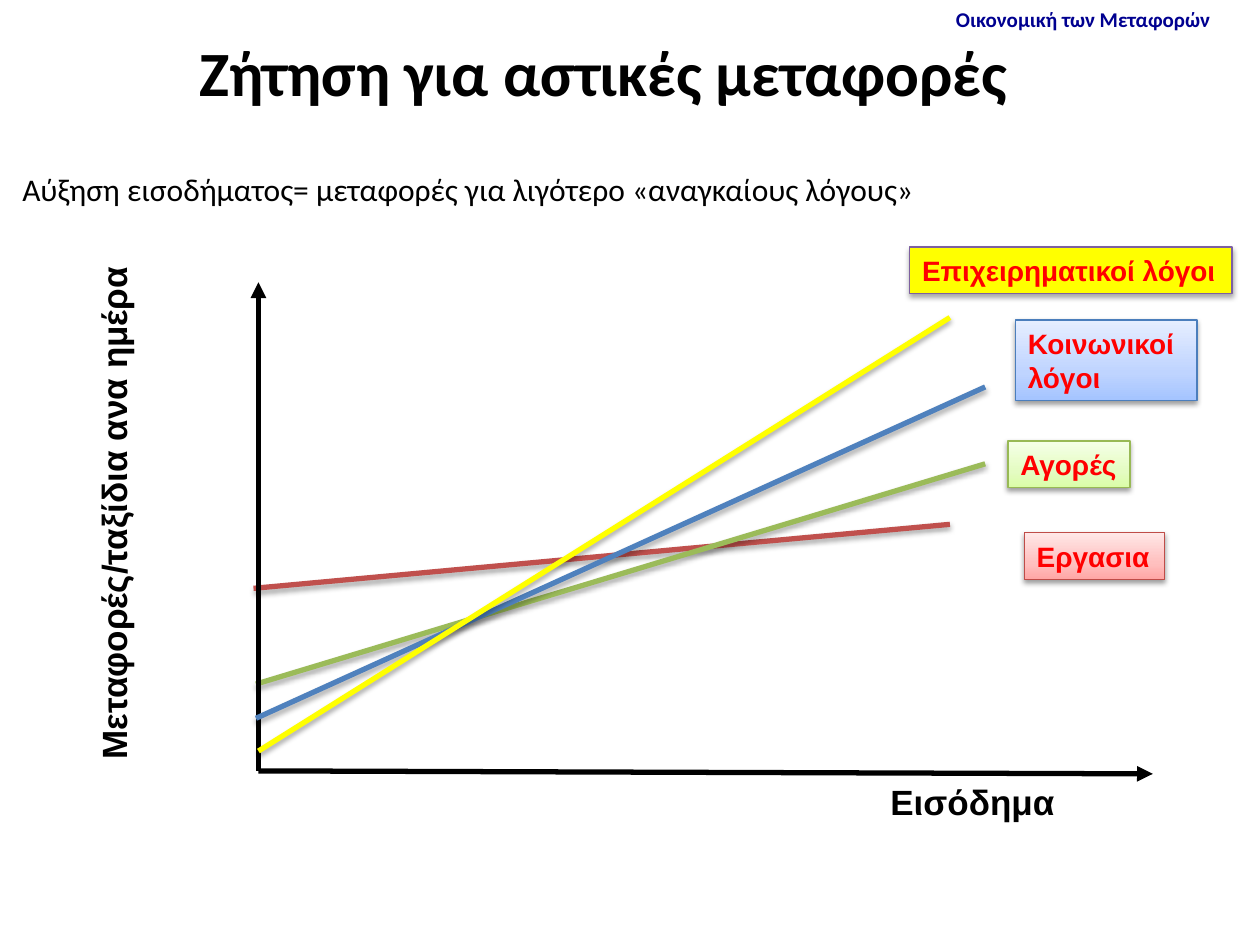
from copy import deepcopy

from lxml.etree import SubElement
from pptx import Presentation
from pptx.dml.color import RGBColor
from pptx.enum.shapes import MSO_CONNECTOR, MSO_SHAPE
from pptx.enum.text import MSO_ANCHOR, PP_ALIGN
from pptx.oxml.ns import qn
from pptx.util import Cm, Pt

TITLE = "Ζήτηση για αστικές μεταφορές"

# text, (left, top, width, height) in cm, rotation, wrap, font, size, colour, bold
TEXTS = [
    ("Οικονομική των Μεταφορών", (19.02, 0, 5.72, 0.76), 0, False, "Calibri", 12, "000090", True),
    ("Αύξηση εισοδήματος= μεταφορές για λιγότερο «αναγκαίους λόγους»",
     (0.2, 3.3, 18.72, 1.02), 0, False, "Calibri", 18, "000000", False),
    ("Eισόδημα", (17.7, 15.6, 3.86, 1.12), 0, False, "Arial", 20, "000000", True),
    ("Μεταφορές/ταξίδια ανα ημέρα",
     (-3.71, 8.99, 12.01, 1.12), 270, True, "Arial", 20, "000000", True),
]

ORIGIN = (5.21, 15.54)
# start, end, colour, is an axis; from back to front
LINES = [
    ((19.15, 10.57), (5.11, 11.86), "C0504D", False),
    ((19.86, 9.35), (5.16, 13.79), "9BBB59", False),
    (ORIGIN, (5.21, 5.69), "000000", True),
    (ORIGIN, (23.24, 15.6), "000000", True),
    ((19.86, 7.8), (5.16, 14.48), "4F81BD", False),
    ((19.15, 6.4), (5.21, 15.14), "FFFF00", False),
]

# text, (left, top, width, height) in cm, wrap, fill colours from bottom to top, outline
LABELS = [
    ("Επιχειρηματικοί λόγοι", (18.34, 4.98, 6.5, 0.94), False, ["FFFF00"], "7D60A0"),
    ("Κοινωνικοί λόγοι", (20.47, 6.45, 3.66, 1.63), True,
     ["A4C4FF", "BFD4FF", "E6EEFF"], "4B7EBC"),
    ("Αγορές", (20.32, 8.89, 2.46, 0.94), False, ["DAFDA7", "E4FCC2", "F5FFE7"], "98B955"),
    ("Εργασια", (20.65, 10.74, 2.82, 0.94), False, ["FFA6A5", "FFC0BF", "FFE7E7"], "BF4C48"),
]
GRADIENT_POSITIONS = (0, 0.35, 1)


def color(hex_text):
    return RGBColor.from_string(hex_text)


def write(shape, text, font, size, hex_text, bold=True, wrap=True, align=PP_ALIGN.LEFT):
    frame = shape.text_frame
    frame.word_wrap = wrap
    para = frame.paragraphs[0]
    para.alignment = align
    span = para.add_run()
    span.text = text
    span.font.name = font
    span.font.size = Pt(size)
    span.font.bold = bold
    span.font.color.rgb = color(hex_text)


def set_shadow(shape, opacity=None, distance=1.8):
    """Cast a soft shadow downwards, or none when no opacity is given."""
    shape_properties = shape._element.spPr
    for old in shape_properties.findall(qn("a:effectLst")):
        shape_properties.remove(old)
    effects = SubElement(shape_properties, qn("a:effectLst"))
    if opacity:
        shadow = SubElement(effects, qn("a:outerShdw"), blurRad=str(Pt(3.1)),
                            dist=str(Pt(distance)), dir="5400000", rotWithShape="0")
        black = SubElement(shadow, qn("a:srgbClr"), val="000000")
        SubElement(black, qn("a:alpha"), val=str(opacity * 1000))


def fill_shape(shape, colors):
    if len(colors) == 1:
        shape.fill.solid()
        shape.fill.fore_color.rgb = color(colors[0])
        return
    shape.fill.gradient()
    shape.fill.gradient_angle = 90
    stop_list = shape._element.spPr.find(".//" + qn("a:gsLst"))
    stop_list.append(deepcopy(stop_list[-1]))
    for stop, position, hex_text in zip(shape.fill.gradient_stops, GRADIENT_POSITIONS, colors):
        stop.position = position
        stop.color.rgb = color(hex_text)


def add_line(slide, start, end, hex_text, is_axis):
    line = slide.shapes.add_connector(MSO_CONNECTOR.STRAIGHT, *map(Cm, start + end))
    line.line.width = Pt(3)
    line.line.color.rgb = color(hex_text)
    if is_axis:
        SubElement(line.line._get_or_add_ln(), qn("a:tailEnd"), type="triangle")
    set_shadow(line, None if is_axis else 35)


def add_label(slide, text, place, wrap, colors, outline):
    label = slide.shapes.add_shape(MSO_SHAPE.RECTANGLE, *map(Cm, place))
    fill_shape(label, colors)
    label.line.color.rgb = color(outline)
    label.line.width = Pt(0.75)
    if len(colors) == 1:
        set_shadow(label, 35)
    else:
        set_shadow(label, 38, 1.6)
    write(label, text, "Arial", 16, "FF0000", wrap=wrap)


def main():
    deck = Presentation()
    deck.slide_width, deck.slide_height = Cm(25.4), Cm(19.05)
    page = deck.slides.add_slide(deck.slide_layouts[5])

    title = page.shapes.title
    title.left, title.top, title.width, title.height = map(Cm, (0.2, 0, 23.93, 2.87))
    title.text_frame.vertical_anchor = MSO_ANCHOR.MIDDLE
    write(title, TITLE, "Calibri", 36, "000000", align=PP_ALIGN.CENTER)

    for text, place, rotation, wrap, font, size, hex_text, bold in TEXTS:
        box = page.shapes.add_textbox(*map(Cm, place))
        box.rotation = rotation
        write(box, text, font, size, hex_text, bold, wrap)
    for line in LINES:
        add_line(page, *line)
    for label in LABELS:
        add_label(page, *label)

    deck.save("out.pptx")


if __name__ == "__main__":
    main()
